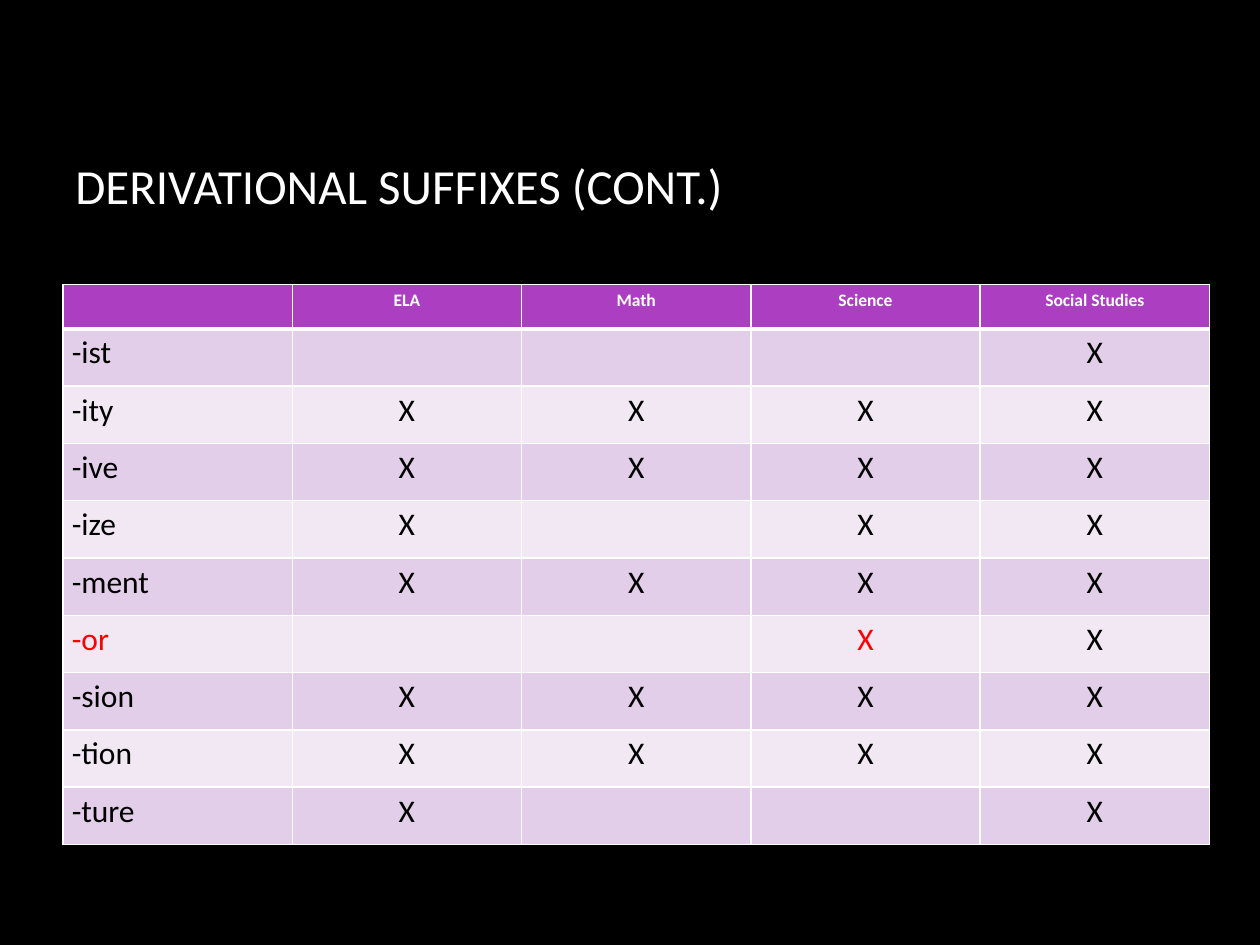
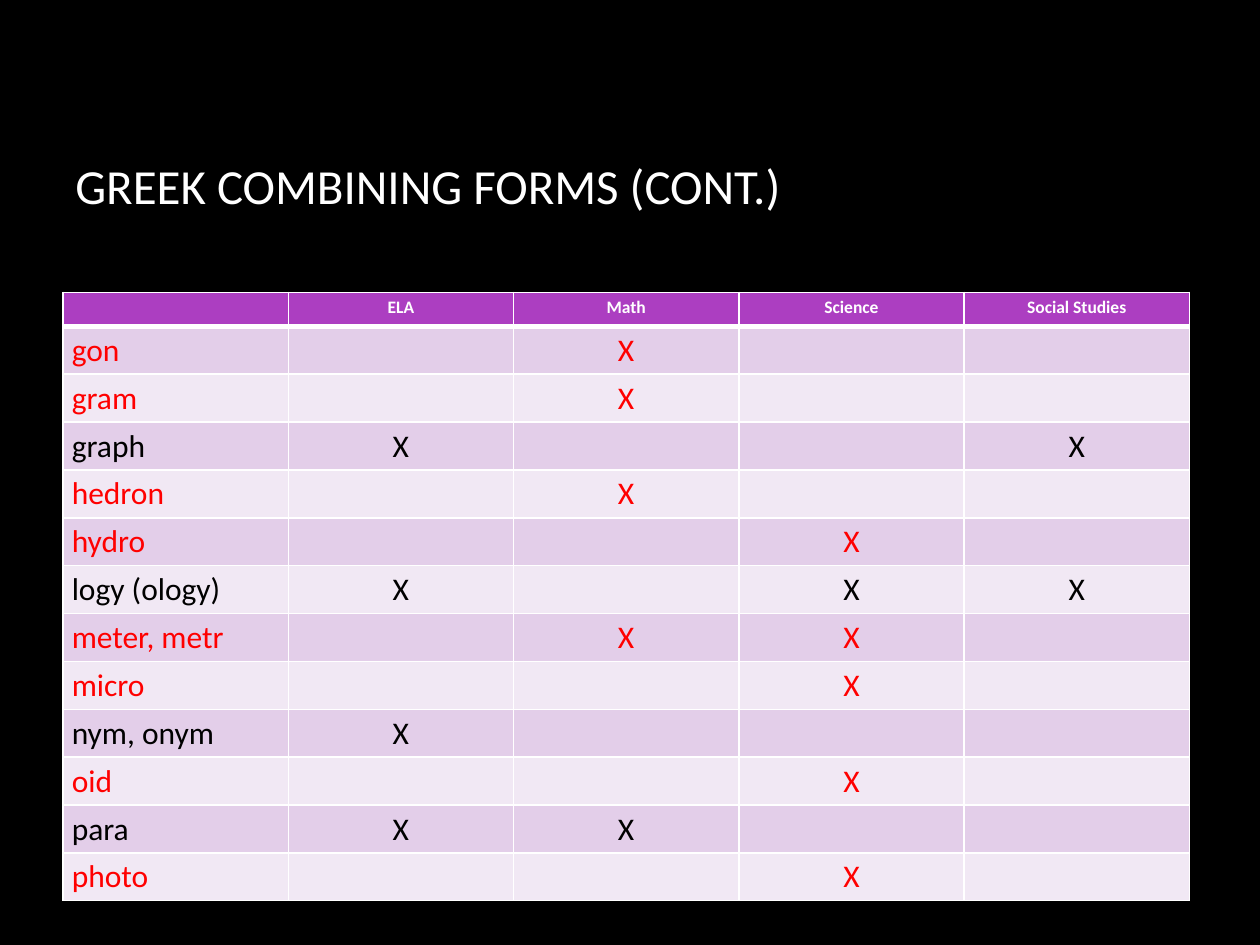
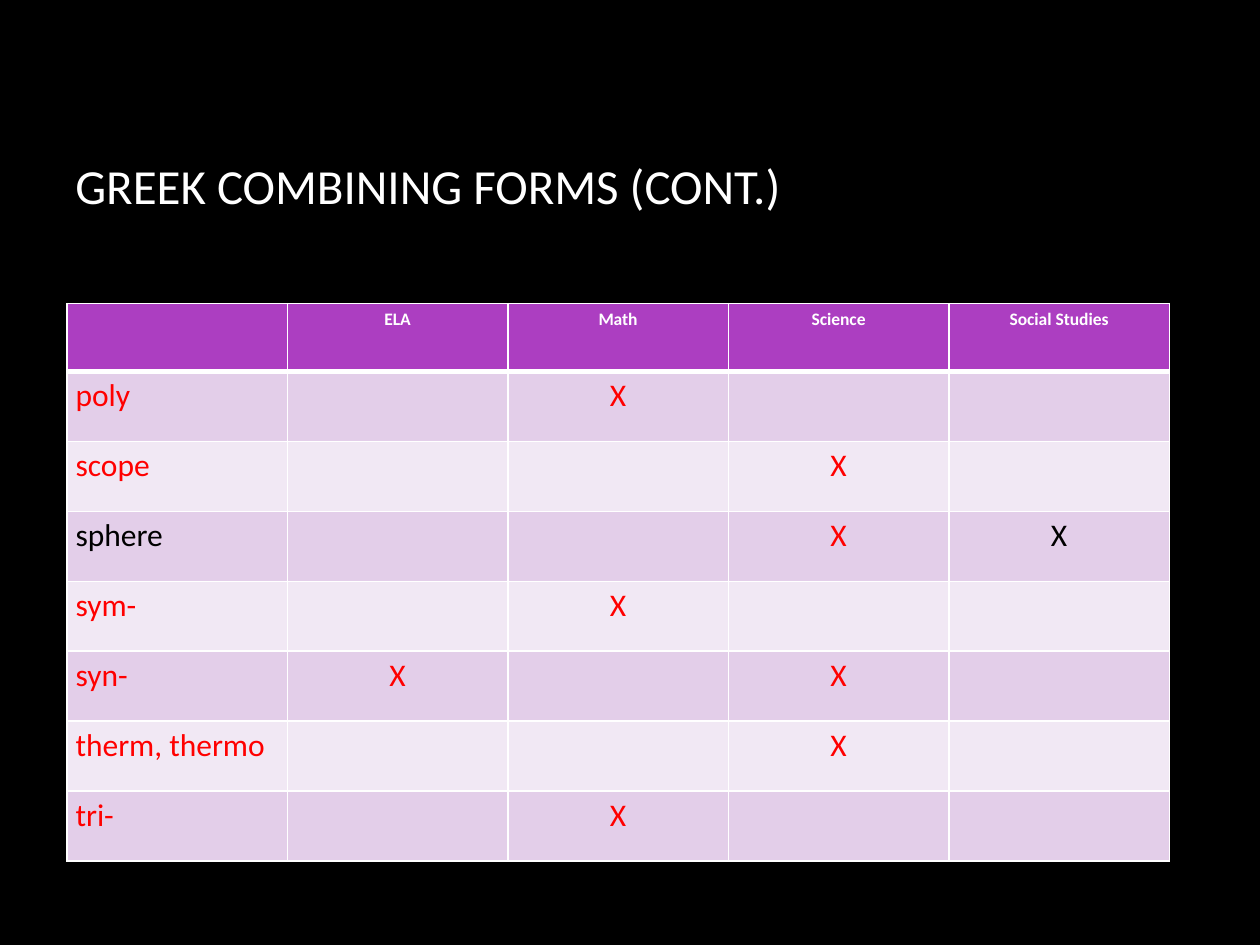
from lxml import etree
from pptx import Presentation
from pptx import util as u
from pptx.dml.color import RGBColor
from pptx.enum import text
from pptx.oxml.ns import qn

COLORS = {
    "background": "000000",
    "title": "FFFFFF",
    "header": "AC3EC1",
    "band_dark": "E3CEE9",
    "band_light": "F1E8F4",
    "border": "FFFFFF",
    "black": "000000",
    "red": "FF0000",
}
FONT = "Calibri"
HEADER_SIZE = 10
BODY_SIZE = 18
SUBJECTS = ["", "ELA", "Math", "Science", "Social Studies"]
MARK_COLORS = {"b": "black", "r": "red"}

# Each row: word part, then colour codes for the word part and the four
# subject marks (b black, r red, - no mark)
SUFFIXES = [
    ("-ist", "b---b"),
    ("-ity", "bbbbb"),
    ("-ive", "bbbbb"),
    ("-ize", "bb-bb"),
    ("-ment", "bbbbb"),
    ("-or", "r--rb"),
    ("-sion", "bbbbb"),
    ("-tion", "bbbbb"),
    ("-ture", "bb--b"),
]
GREEK_G_TO_P = [
    ("gon", "r-r--"),
    ("gram", "r-r--"),
    ("graph", "bb--b"),
    ("hedron", "r-r--"),
    ("hydro", "r--r-"),
    ("logy (ology)", "bb-bb"),
    ("meter, metr", "r-rr-"),
    ("micro", "r--r-"),
    ("nym, onym", "bb---"),
    ("oid", "r--r-"),
    ("para", "bbb--"),
    ("photo", "r--r-"),
]
GREEK_P_TO_T = [
    ("poly", "r-r--"),
    ("scope", "r--r-"),
    ("sphere", "b--rb"),
    ("sym-", "r-r--"),
    ("syn-", "rr-r-"),
    ("therm, thermo", "r--r-"),
    ("tri-", "r-r--"),
]


def rgb(name):
    return RGBColor.from_string(COLORS[name])


def write_text(frame, words, size, color, bold=False, align=text.PP_ALIGN.LEFT):
    para = frame.paragraphs[0]
    para.alignment = align
    if not words:
        # An empty cell keeps its text size so that its row does not grow
        etree.SubElement(para._p, qn("a:endParaRPr"), sz=str(size * 100))
        return
    span = para.add_run()
    span.text = words
    span.font.name = FONT
    span.font.size = u.Pt(size)
    span.font.bold = bold
    span.font.color.rgb = rgb(color)


class SuffixDeck:
    def __init__(self):
        self.deck = Presentation()
        self.deck.slide_width = u.Inches(10)
        self.deck.slide_height = u.Inches(7.5)
        self.page = None

    def add_page(self, title):
        self.page = self.deck.slides.add_slide(self.deck.slide_layouts[6])
        fill = self.page.background.fill
        fill.solid()
        fill.fore_color.rgb = rgb("background")
        self.add_title(title)

    def add_title(self, words):
        box = self.page.shapes.add_textbox(
            u.Inches(0.5), u.Inches(0.67), u.Inches(8.5), u.Inches(1.59))
        frame = box.text_frame
        frame.word_wrap = True
        frame.vertical_anchor = text.MSO_ANCHOR.MIDDLE
        write_text(frame, words, 28, "title")

    def add_cell(self, cell, words, fill, top=1, bottom=1, **style):
        cell.margin_left = cell.margin_right = u.Inches(0.07)
        cell.margin_top = cell.margin_bottom = u.Inches(0.04)
        # Borders come before the fill in the cell properties
        properties = cell._tc.get_or_add_tcPr()
        for side, width in (("L", 1), ("R", 1), ("T", top), ("B", bottom)):
            line = etree.SubElement(properties, qn(f"a:ln{side}"), w=str(u.Pt(width)))
            solid = etree.SubElement(line, qn("a:solidFill"))
            etree.SubElement(solid, qn("a:srgbClr"), val=COLORS["border"])
        cell.fill.solid()
        cell.fill.fore_color.rgb = rgb(fill)
        write_text(cell.text_frame, words, **style)

    def add_mark_table(self, entries, left, top, width, header_height, row_height):
        rows, columns = len(entries) + 1, len(SUBJECTS)
        height = header_height + row_height * len(entries)
        table = self.page.shapes.add_table(
            rows, columns, u.Inches(left), u.Inches(top),
            u.Inches(width), u.Inches(height)).table
        table.first_row = table.horz_banding = False
        for column in table.columns:
            column.width = u.Inches(width / columns)
        for index, row in enumerate(table.rows):
            row.height = u.Inches(row_height if index else header_height)

        # Header row
        for column, subject in enumerate(SUBJECTS):
            self.add_cell(table.cell(0, column), subject, "header", bottom=3,
                          size=HEADER_SIZE, color="title", bold=True,
                          align=text.PP_ALIGN.CENTER)

        # Banded body rows
        for row, (label, codes) in enumerate(entries, start=1):
            band = "band_dark" if row % 2 else "band_light"
            for column, code in enumerate(codes):
                mark = "" if code == "-" else "X"
                align = text.PP_ALIGN.CENTER if column else text.PP_ALIGN.LEFT
                self.add_cell(table.cell(row, column), mark if column else label,
                              band, top=3 if row == 1 else 1, size=BODY_SIZE,
                              color=MARK_COLORS.get(code, "black"), align=align)


def main():
    show = SuffixDeck()

    # Derivational suffixes
    show.add_page("DERIVATIONAL SUFFIXES (CONT.)")
    show.add_mark_table(SUFFIXES, 0.5, 2.26, 9.1, 0.35, 0.455)

    # Greek combining forms, gon to photo
    show.add_page("GREEK COMBINING FORMS (CONT.)")
    show.add_mark_table(GREEK_G_TO_P, 0.5, 2.32, 8.94, 0.27, 0.38)

    # Greek combining forms, poly to tri-
    show.add_page("GREEK COMBINING FORMS (CONT.)")
    show.add_mark_table(GREEK_P_TO_T, 0.53, 2.41, 8.75, 0.54, 0.555)

    show.deck.save("out.pptx")


if __name__ == "__main__":
    main()
